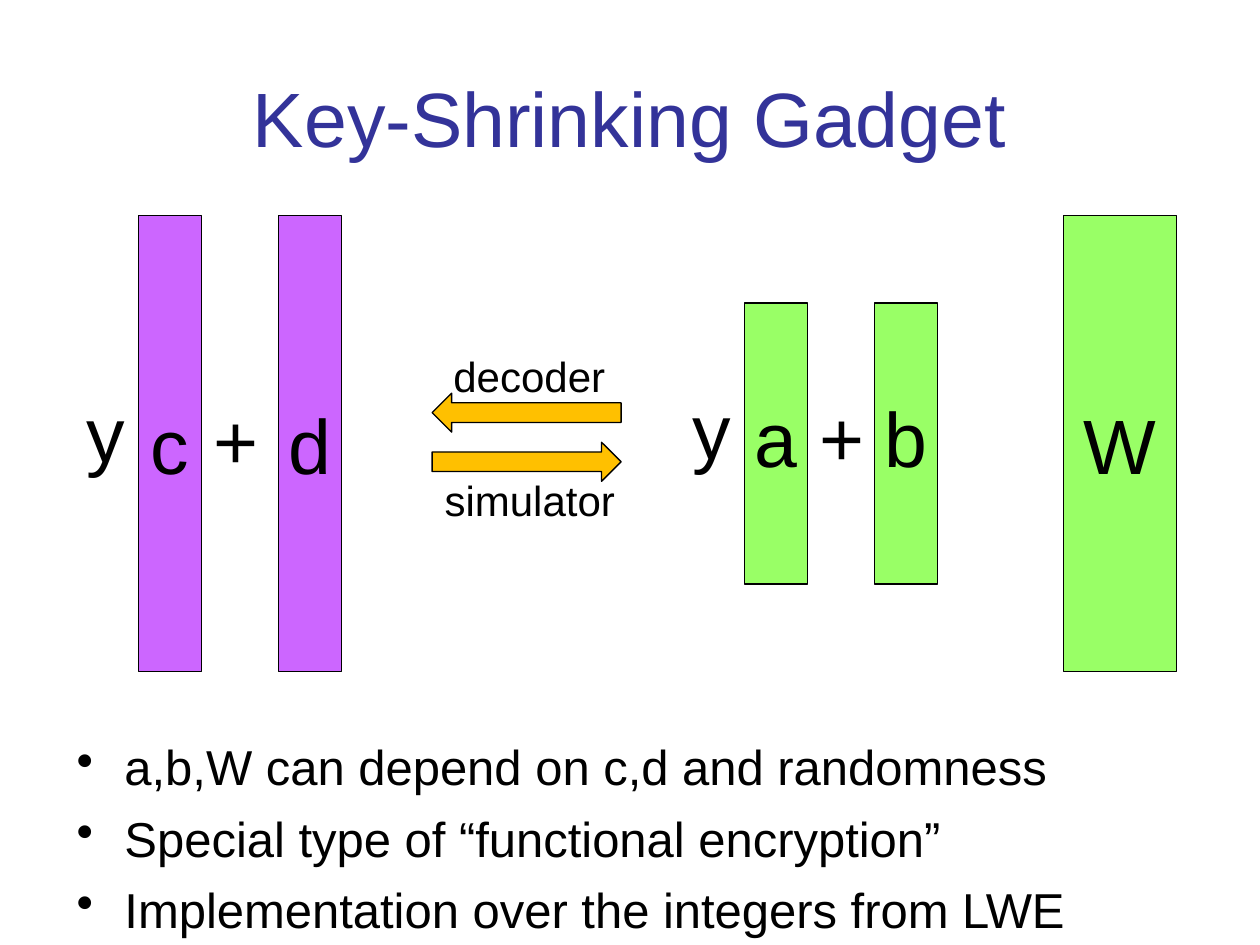
from pptx import Presentation
from pptx.dml.color import RGBColor
from pptx.enum.shapes import MSO_SHAPE
from pptx.enum.text import MSO_ANCHOR, PP_ALIGN
from pptx.oxml.xmlchemy import OxmlElement
from pptx.util import Inches, Pt

PURPLE, GREEN, GOLD = "CC66FF", "99FF66", "FFC000"
BLACK, BLUE = "000000", "333399"

TITLE = "Key-Shrinking Gadget"
POINTS = [
    "a,b,W can depend on c,d and randomness",
    "Special type of “functional encryption”",
    "Implementation over the integers from LWE",
]
# Vectors: letter, left, width, height, fill, bottom inset
BARS = [
    ("c", 1.1, 0.5, 3.62, PURPLE, 0.05),
    ("d", 2.21, 0.5, 3.62, PURPLE, 0.05),
    ("a", 5.91, 0.5, 2.23, GREEN, 0.15),
    ("b", 6.94, 0.5, 2.23, GREEN, 0.15),
    ("W", 8.44, 0.9, 3.62, GREEN, 0.05),
]
MID = 3.52  # shared centre line of the vectors
# Labels: text, left, top, width, height, size
LABELS = [
    ("y", 0.59, 3.01, 0.51, 0.84, 44),
    ("+", 1.6, 3.07, 0.56, 0.84, 44),
    ("y", 5.4, 2.99, 0.51, 0.84, 44),
    ("+", 6.41, 3.04, 0.56, 0.84, 44),
    ("decoder", 3.5, 2.73, 1.42, 0.5, 24),
    ("simulator", 3.43, 3.72, 1.57, 0.5, 24),
]
ARROWS = [(MSO_SHAPE.LEFT_ARROW, 3.12), (MSO_SHAPE.RIGHT_ARROW, 3.51)]


def color(code):
    return RGBColor.from_string(code)


def style(par, size, code=BLACK, align=PP_ALIGN.LEFT):
    par.alignment = align
    par.font.name = "Arial"
    par.font.size = Pt(size)
    par.font.color.rgb = color(code)


def add_text(slide, box, lines, size, code=BLACK, align=PP_ALIGN.LEFT, wrap=True):
    frame = slide.shapes.add_textbox(*map(Inches, box)).text_frame
    frame.word_wrap = wrap
    frame.text = "\n".join(lines)
    for par in frame.paragraphs:
        style(par, size, code, align)
    return frame


def add_block(slide, kind, box, fill):
    shape = slide.shapes.add_shape(kind, *map(Inches, box))
    shape.shadow.inherit = False
    shape.fill.solid()
    shape.fill.fore_color.rgb = color(fill)
    shape.line.color.rgb = color(BLACK)
    shape.line.width = Pt(0.75)
    return shape


def add_bullet(par):
    props = par._p.get_or_add_pPr()
    props.set("marL", str(Inches(0.38)))
    props.set("indent", str(Inches(-0.38)))
    mark = OxmlElement("a:buChar")
    mark.set("char", "•")
    props.append(mark)


def main():
    prs = Presentation()
    prs.slide_width, prs.slide_height = Inches(10), Inches(7.5)
    slide = prs.slides.add_slide(prs.slide_layouts[6])

    # Title and bullet points
    title = add_text(slide, (0.5, 0.3, 9, 1.25), [TITLE], 44, BLUE, PP_ALIGN.CENTER)
    title.vertical_anchor = MSO_ANCHOR.MIDDLE
    body = add_text(slide, (0.51, 5.8, 9, 1.57), POINTS, 28)
    for par in body.paragraphs:
        par.space_before = Pt(7)
        add_bullet(par)

    # Vectors, centred on one line
    for letter, left, width, height, fill, inset in BARS:
        box = (left, MID - height / 2, width, height)
        frame = add_block(slide, MSO_SHAPE.RECTANGLE, box, fill).text_frame
        frame.word_wrap = False
        frame.vertical_anchor = MSO_ANCHOR.MIDDLE
        frame.margin_bottom = Inches(inset)
        frame.text = letter
        style(frame.paragraphs[0], 44, align=PP_ALIGN.CENTER)

    # Arrows between the two sides
    for kind, top in ARROWS:
        add_block(slide, kind, (3.43, top, 1.5, 0.31), GOLD)

    # Variables, signs and arrow labels
    for text, *box, size in LABELS:
        add_text(slide, box, [text], size, wrap=False)

    prs.save("out.pptx")


if __name__ == "__main__":
    main()
